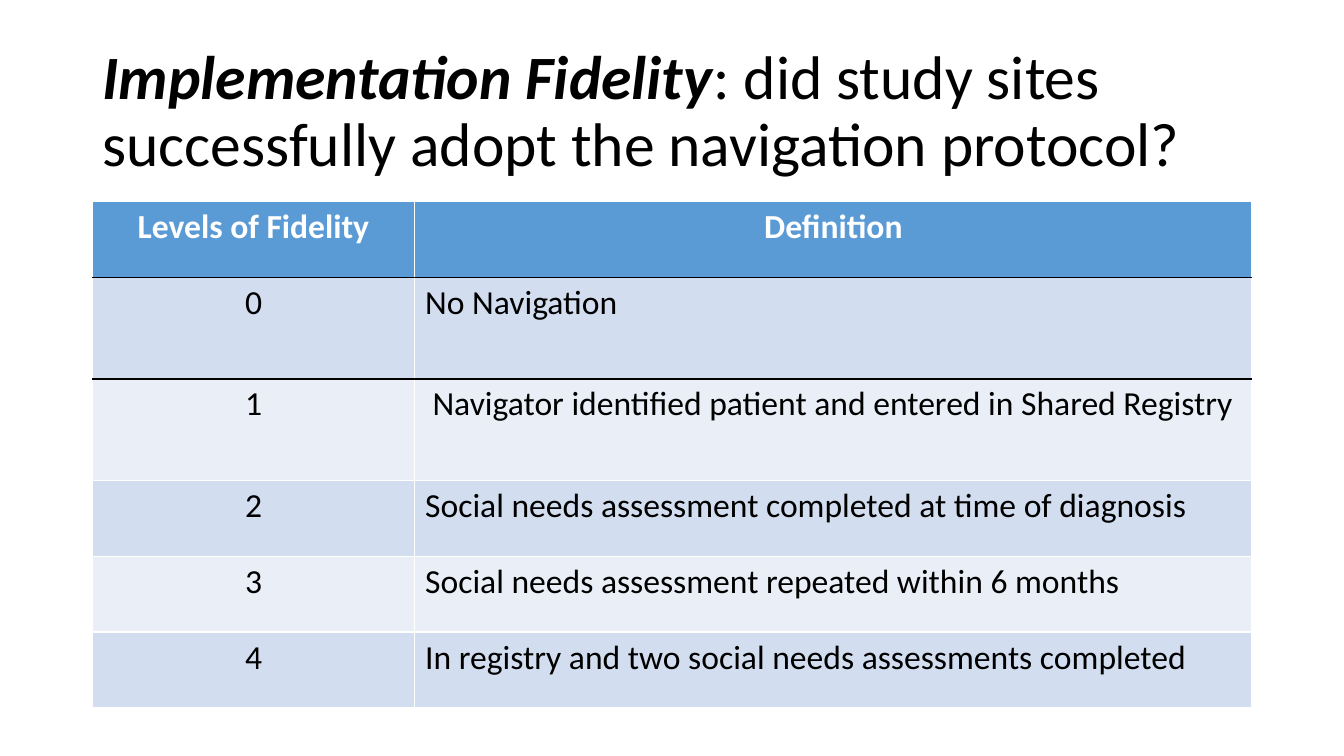
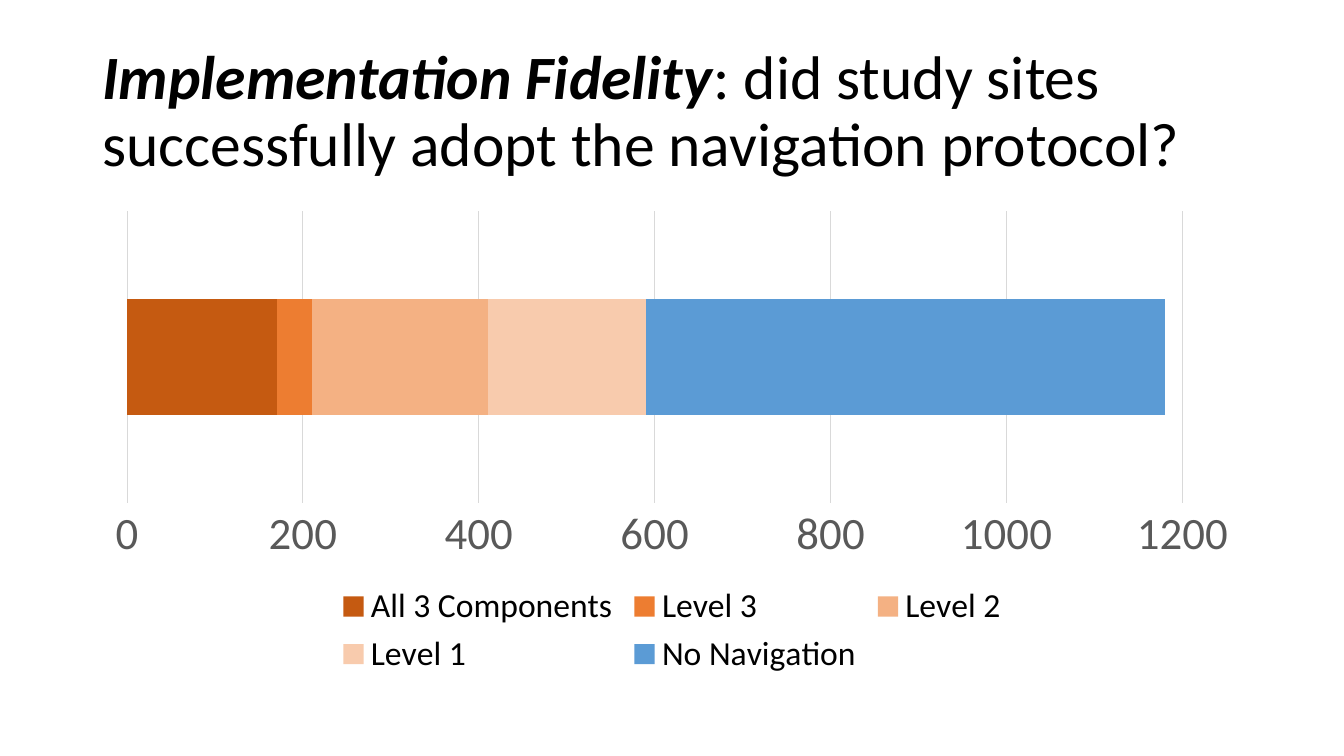
from dataclasses import dataclass

from lxml.etree import SubElement
from pptx import Presentation
from pptx.chart.data import CategoryChartData
from pptx.dml.color import RGBColor
from pptx.enum.chart import XL_CHART_TYPE, XL_LEGEND_POSITION, XL_TICK_MARK
from pptx.enum.text import MSO_ANCHOR, MSO_AUTO_SIZE, PP_ALIGN
from pptx.oxml.ns import qn
from pptx.util import Emu, Pt

EMU_PER_PX = 9525
FONT = "Calibri"
COLORS = {
    "black": "000000",
    "white": "FFFFFF",
    "blue": "5B9BD5",
    "band_dark": "D2DEEF",
    "band_light": "EAEFF7",
    "axis_text": "595959",
    "gridline": "D9D9D9",
    "all_components": "C55A11",
    "level_3": "ED7D31",
    "level_2": "F4B183",
    "level_1": "F8CBAD",
}
LEFT, WIDTH = 88, 1104
TITLE_TOP, TITLE_HEIGHT = 38, 139
CONTENT_TOP = 192
CHART_HEIGHT = 457
COLUMN_WIDTHS = (307, 797)
CELL_INSET = 10


@dataclass(frozen=True)
class FidelityLevel:
    level: str
    definition: str
    height: int = 72
    indent: int = 0


@dataclass(frozen=True)
class Segment:
    name: str
    patients: int
    color: str


HEADER = FidelityLevel("Levels of Fidelity", "Definition")
LEVELS = (
    FidelityLevel("0", "No Navigation", height=97),
    FidelityLevel("1", "Navigator identified patient and entered in Shared Registry", height=97, indent=7),
    FidelityLevel("2", "Social needs assessment completed at time of diagnosis"),
    FidelityLevel("3", "Social needs assessment repeated within 6 months"),
    FidelityLevel("4", "In registry and two social needs assessments completed"),
)
RULED_ROWS = (0, 1)
SEGMENTS = (
    Segment("All 3 Components", 170, "all_components"),
    Segment("Level 3", 40, "level_3"),
    Segment("Level 2", 200, "level_2"),
    Segment("Level 1", 180, "level_1"),
    Segment("No Navigation", 590, "blue"),
)


def px(length: int) -> Emu:
    return Emu(length * EMU_PER_PX)


def rgb(color: str) -> RGBColor:
    return RGBColor.from_string(COLORS[color])


def style_font(font, size: int, color: str = "black", bold: bool = False, italic: bool = False) -> None:
    font.name = FONT
    font.size = Pt(size)
    font.bold = bold
    font.italic = italic
    font.color.rgb = rgb(color)


def add_text(paragraph, text: str, *, size: int, color: str = "black",
             bold: bool = False, italic: bool = False, align=PP_ALIGN.LEFT) -> None:
    paragraph.alignment = align
    run = paragraph.add_run()
    run.text = text
    style_font(run.font, size, color, bold, italic)


def add_titled_slide(deck):
    slide = deck.slides.add_slide(deck.slide_layouts[5])
    title = slide.shapes.title
    title.left, title.top = px(LEFT), px(TITLE_TOP)
    title.width, title.height = px(WIDTH), px(TITLE_HEIGHT)
    frame = title.text_frame
    frame.word_wrap = True
    frame.auto_size = MSO_AUTO_SIZE.NONE
    frame.vertical_anchor = MSO_ANCHOR.MIDDLE
    heading = frame.paragraphs[0]
    heading.line_spacing = 0.9
    add_text(heading, "Implementation Fidelity", size=44, bold=True, italic=True)
    add_text(heading, ": did study sites successfully adopt the navigation protocol?", size=44)
    return slide


def set_borders(cell, top: str, bottom: str) -> None:
    properties = cell._tc.get_or_add_tcPr()
    sides = (("a:lnL", "white"), ("a:lnR", "white"), ("a:lnT", top), ("a:lnB", bottom))
    for position, (tag, color) in enumerate(sides):
        line = SubElement(properties, qn(tag), w=str(Pt(1)))
        fill = SubElement(line, qn("a:solidFill"))
        SubElement(fill, qn("a:srgbClr"), val=COLORS[color])
        properties.insert(position, line)


def rule_color(row: int) -> str:
    return "black" if row in RULED_ROWS else "white"


def add_fidelity_table(slide) -> None:
    entries = (HEADER, *LEVELS)
    height = sum(entry.height for entry in entries)
    table = slide.shapes.add_table(
        len(entries), len(COLUMN_WIDTHS), px(LEFT), px(CONTENT_TOP), px(WIDTH), px(height)
    ).table
    for column, width in zip(table.columns, COLUMN_WIDTHS):
        column.width = px(width)
    for row, entry in enumerate(entries):
        table.rows[row].height = px(entry.height)
        is_header = row == 0
        band = "blue" if is_header else ("band_dark" if row % 2 else "band_light")
        for column, text in enumerate((entry.level, entry.definition)):
            cell = table.cell(row, column)
            cell.fill.solid()
            cell.fill.fore_color.rgb = rgb(band)
            set_borders(cell, rule_color(row - 1), rule_color(row))
            if column == 1:
                cell.margin_left = px(CELL_INSET + entry.indent)
            add_text(
                cell.text_frame.paragraphs[0], text, size=24,
                color="white" if is_header else "black", bold=is_header,
                align=PP_ALIGN.CENTER if is_header or column == 0 else PP_ALIGN.LEFT,
            )


def add_fidelity_chart(slide) -> None:
    data = CategoryChartData()
    data.categories = ["1"]
    for segment in SEGMENTS:
        data.add_series(segment.name, [segment.patients])
    chart = slide.shapes.add_chart(
        XL_CHART_TYPE.BAR_STACKED, px(LEFT), px(CONTENT_TOP), px(WIDTH), px(CHART_HEIGHT), data
    ).chart
    chart.has_title = False
    style_font(chart.font, 10)
    chart.has_legend = True
    chart.legend.position = XL_LEGEND_POSITION.BOTTOM
    chart.legend.include_in_layout = False
    style_font(chart.legend.font, 24)

    plot = chart.plots[0]
    plot.vary_by_categories = False
    plot.gap_width = 150
    plot.overlap = 100
    for series, segment in zip(plot.series, SEGMENTS):
        series.format.fill.solid()
        series.format.fill.fore_color.rgb = rgb(segment.color)

    chart.category_axis.visible = False
    axis = chart.value_axis
    axis.minimum_scale, axis.maximum_scale, axis.major_unit = 0, 1200, 200
    axis.major_tick_mark = axis.minor_tick_mark = XL_TICK_MARK.NONE
    axis.format.line.fill.background()
    axis.has_major_gridlines = True
    gridline = axis.major_gridlines.format.line
    gridline.width = Pt(0.75)
    gridline.color.rgb = rgb("gridline")
    style_font(axis.tick_labels.font, 32, "axis_text")


def main() -> None:
    deck = Presentation()
    deck.slide_width, deck.slide_height = px(1280), px(720)
    add_fidelity_table(add_titled_slide(deck))
    add_fidelity_chart(add_titled_slide(deck))
    deck.save("out.pptx")


if __name__ == "__main__":
    main()
